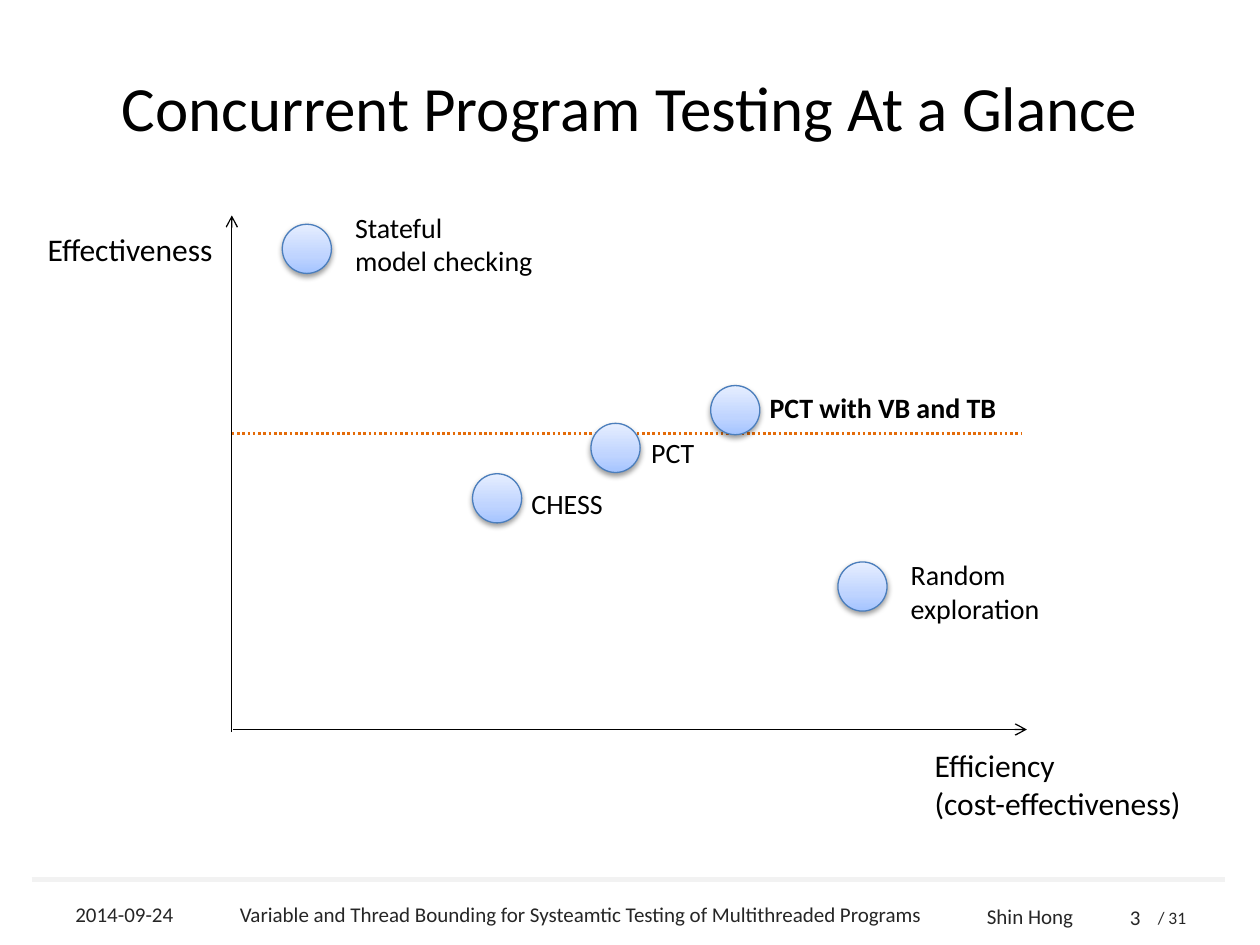
"""Build the slide that places concurrent program testing techniques on two axes."""
from copy import deepcopy
from dataclasses import dataclass
from typing import Optional

from lxml import etree
from pptx import Presentation
from pptx.dml.color import RGBColor
from pptx.enum import dml, shapes, text
from pptx.oxml import ns
from pptx.util import Inches, Pt

BLACK = RGBColor(0x00, 0x00, 0x00)
DARK_GREY = RGBColor(0x26, 0x26, 0x26)
PALE_GREY = RGBColor(0xF2, 0xF2, 0xF2)
ORANGE = RGBColor(0xE4, 0x6C, 0x0A)
BALL_EDGE = RGBColor(0x4B, 0x7E, 0xBC)
BALL_STOPS = (
    (0, RGBColor(0xA4, 0xC4, 0xFF)),
    (0.35, RGBColor(0xBF, 0xD4, 0xFF)),
    (1, RGBColor(0xE6, 0xEE, 0xFF)),
)
FONT = "Calibri"
BALL_SIZE = 0.39
LEFT, CENTER, RIGHT = text.PP_ALIGN.LEFT, text.PP_ALIGN.CENTER, text.PP_ALIGN.RIGHT
TOP, MIDDLE = text.MSO_ANCHOR.TOP, text.MSO_ANCHOR.MIDDLE


@dataclass(frozen=True)
class Label:
    words: str
    left: float
    top: float
    width: float
    height: float
    size: int = 16
    color: RGBColor = BLACK
    align: text.PP_ALIGN = LEFT
    anchor: text.MSO_ANCHOR = TOP
    bold: bool = False


@dataclass(frozen=True)
class Rule:
    start: tuple
    end: tuple
    color: RGBColor = BLACK
    width: float = 0.75
    dash: Optional[dml.MSO_LINE] = None
    arrow: bool = False


@dataclass(frozen=True)
class Technique:
    left: float
    top: float
    label: Label


LABELS = (
    Label("/ 31", 9.09, 7.15, 0.55, 0.27, 10, DARK_GREY, LEFT, MIDDLE),
    Label("Shin Hong", 7.73, 7.12, 0.89, 0.25, 12, DARK_GREY, CENTER),
    Label("Concurrent Program Testing At a Glance", 0.5, 0.3, 9, 1.09, 36, BLACK, CENTER, MIDDLE),
    Label("2014-09-24", 0.5, 7.09, 1.04, 0.33, 12, DARK_GREY, LEFT, MIDDLE),
    Label("Variable and Thread Bounding for Systeamtic Testing of Multithreaded Programs",
          1.54, 7.09, 6.14, 0.33, 12, DARK_GREY, CENTER, MIDDLE),
    Label("3", 8.68, 7.15, 0.47, 0.26, 12, DARK_GREY, RIGHT, MIDDLE),
    Label("Effectiveness", 0.28, 1.78, 1.57, 0.4, 18),
    Label("Efficiency\n(cost-effectiveness)", 7.32, 5.87, 2.57, 0.71, 18),
)
RULES = (
    Rule((0.25, 6.98), (9.72, 6.98), PALE_GREY, 3),
    Rule((1.84, 5.81), (1.84, 1.71), arrow=True),
    Rule((1.85, 5.79), (8.15, 5.79), arrow=True),
    Rule((1.84, 3.44), (8.1, 3.44), ORANGE, 1.5, dml.MSO_LINE.ROUND_DOT),
)
TECHNIQUES = (
    Technique(2.24, 1.78, Label("Stateful \vmodel checking", 2.72, 1.62, 2.2, 0.64)),
    Technique(6.65, 4.46, Label("Random\nexploration", 7.13, 4.38, 2.2, 0.64)),
    Technique(3.75, 3.76, Label("CHESS", 4.12, 3.81, 0.94, 0.37)),
    Technique(4.69, 3.36, Label("PCT", 5.07, 3.41, 0.94, 0.37)),
    Technique(5.64, 3.06, Label("PCT with VB and TB", 6.01, 3.05, 2.28, 0.37, bold=True)),
)


def draw_label(page, label: Label) -> None:
    """Write a label in its own text box."""
    box = page.shapes.add_textbox(
        *map(Inches, (label.left, label.top, label.width, label.height)))
    frame = box.text_frame
    frame.word_wrap = True
    frame.vertical_anchor = label.anchor
    frame.text = label.words
    formats = {"name": FONT, "size": Pt(label.size), "bold": label.bold}
    for para in frame.paragraphs:
        para.alignment = label.align
        for span in para.runs:
            for key, value in formats.items():
                setattr(span.font, key, value)
            span.font.color.rgb = label.color


def draw_rule(page, rule: Rule) -> None:
    """Draw a straight line, with an arrowhead at its end if asked."""
    connector = page.shapes.add_connector(
        shapes.MSO_CONNECTOR.STRAIGHT, *map(Inches, rule.start + rule.end))
    line = connector.line
    line.color.rgb = rule.color
    line.width = Pt(rule.width)
    if rule.dash is not None:
        line.dash_style = rule.dash
    properties = connector._element.spPr
    if rule.arrow:
        etree.SubElement(properties.find(ns.qn("a:ln")), ns.qn("a:tailEnd"), type="arrow")
    etree.SubElement(properties, ns.qn("a:effectLst"))


def shade_ball(ball) -> None:
    """Give a ball its upward gradient and soft shadow."""
    ball.fill.gradient()
    ball.fill.gradient_angle = 90
    stop_list = ball._element.spPr.find(".//" + ns.qn("a:gsLst"))
    stop_list.append(deepcopy(stop_list[-1]))
    for stop, (position, color) in zip(ball.fill.gradient_stops, BALL_STOPS):
        stop.position = position
        stop.color.rgb = color
    ball.shadow.inherit = False
    effects = ball._element.spPr.find(ns.qn("a:effectLst"))
    shadow = etree.SubElement(effects, ns.qn("a:outerShdw"), blurRad=str(Pt(3.1)),
                              dist=str(Pt(1.6)), dir="5400000", rotWithShape="0")
    color = etree.SubElement(shadow, ns.qn("a:srgbClr"), val=str(BLACK))
    etree.SubElement(color, ns.qn("a:alpha"), val="38000")


def draw_technique(page, technique: Technique) -> None:
    """Draw a technique as a ball with its label."""
    ball = page.shapes.add_shape(
        shapes.MSO_SHAPE.OVAL,
        *map(Inches, (technique.left, technique.top, BALL_SIZE, BALL_SIZE)))
    ball.line.color.rgb = BALL_EDGE
    ball.line.width = Pt(0.75)
    shade_ball(ball)
    draw_label(page, technique.label)


def main() -> None:
    """Assemble and save the deck."""
    deck = Presentation()
    deck.slide_width, deck.slide_height = Inches(10), Inches(7.5)
    page = deck.slides.add_slide(deck.slide_layouts[6])
    for rule in RULES:
        draw_rule(page, rule)
    for label in LABELS:
        draw_label(page, label)
    for technique in TECHNIQUES:
        draw_technique(page, technique)
    deck.save("out.pptx")


if __name__ == "__main__":
    main()
